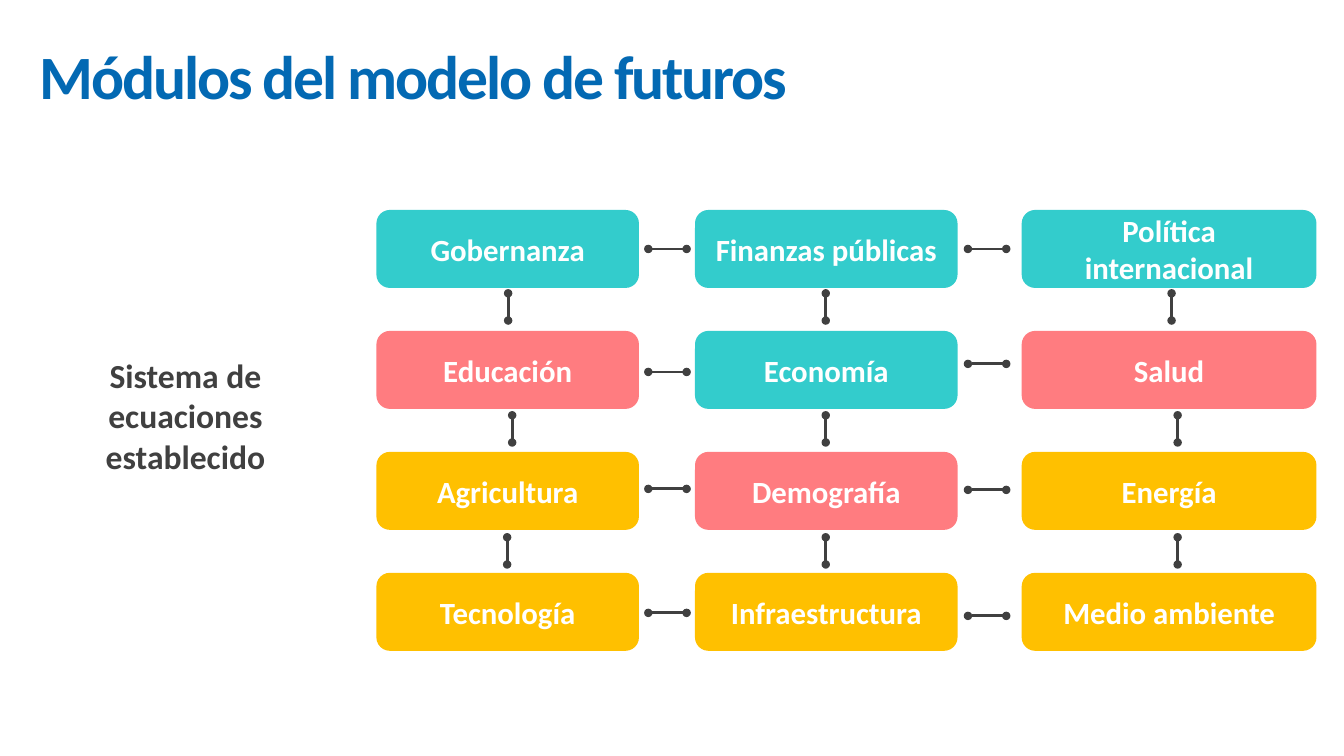
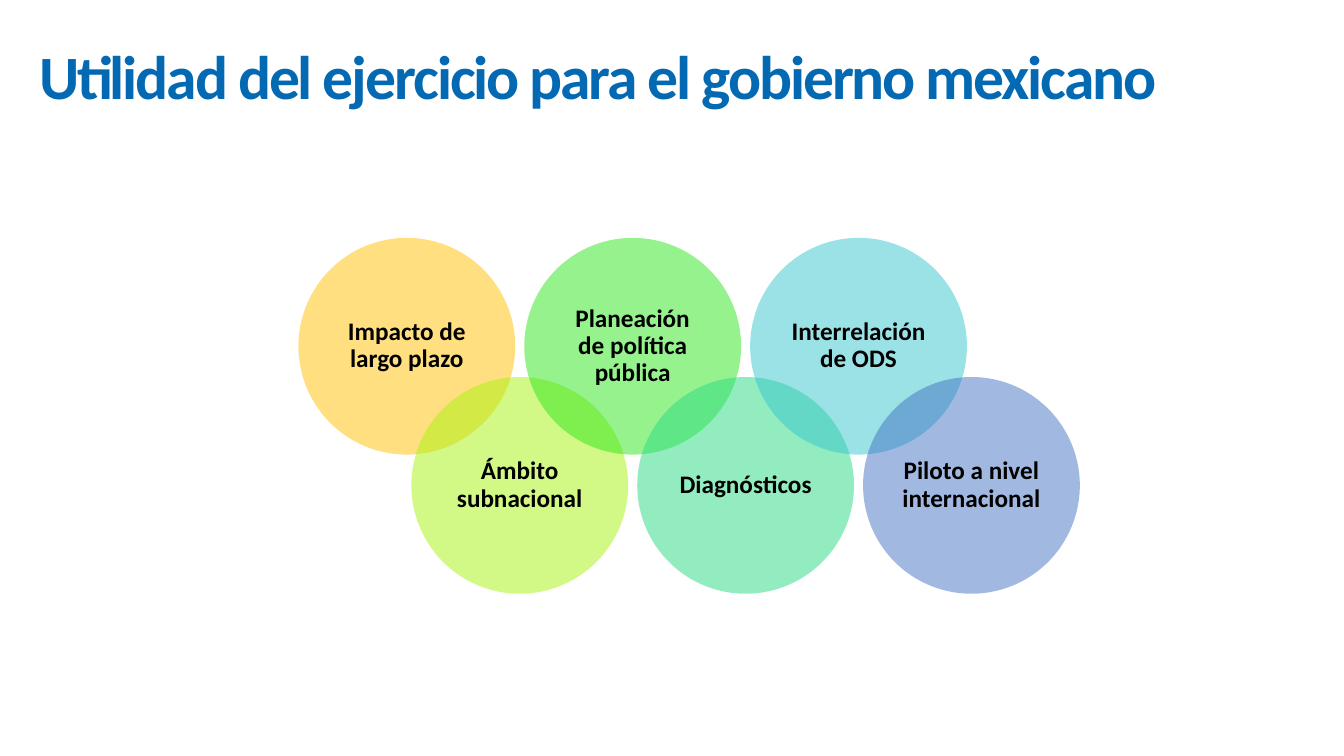
import pptx
import pptx.util
from pptx.dml.color import RGBColor
from pptx.enum.shapes import MSO_CONNECTOR, MSO_SHAPE
from pptx.enum.text import MSO_ANCHOR, PP_ALIGN
from pptx.oxml.ns import qn
from pptx.util import Inches
from lxml import etree

FONT = "Calibri"
BLUE = RGBColor(0x03, 0x69, 0xB3)
WHITE = RGBColor(0xFF, 0xFF, 0xFF)
BLACK = RGBColor(0x00, 0x00, 0x00)
GRAY = RGBColor(0x40, 0x40, 0x40)
TEAL = RGBColor(0x33, 0xCC, 0xCC)
CORAL = RGBColor(0xFF, 0x7C, 0x80)
AMBER = RGBColor(0xFF, 0xC0, 0x00)
LIME = RGBColor(0xA7, 0xF3, 0x0E)
GREEN = RGBColor(0x2E, 0xE7, 0x1C)
MINT = RGBColor(0x29, 0xDB, 0x80)
CYAN = RGBColor(0x37, 0xC6, 0xCF)
INDIGO = RGBColor(0x44, 0x72, 0xC4)

# Module grid: (left, width) of each column, top of the first row, row pitch
COLUMNS = [(3.74, 2.59), (6.9, 2.59), (10.14, 2.91)]
GRID_TOP, ROW_PITCH, MODULE_HEIGHT = 2.09, 1.2, 0.76
MODULES = [
    [("Gobernanza", TEAL), ("Finanzas públicas", TEAL), ("Política internacional", TEAL)],
    [("Educación", CORAL), ("Economía", TEAL), ("Salud", CORAL)],
    [("Agricultura", AMBER), ("Demografía", CORAL), ("Energía", AMBER)],
    [("Tecnología", AMBER), ("Infraestructura", AMBER), ("Medio ambiente", AMBER)],
]
# Links between columns: left end and the height in each row
ROW_LINKS = [(6.43, (2.47, 3.69, 4.85, 6.08)), (9.6, (2.47, 3.61, 4.86, 6.11))]
ROW_LINK_LENGTH = 0.38
# Links between rows: horizontal position in each gap, one tuple per column
COLUMN_LINKS = [(5.04, 5.08, 5.03), (8.19, 8.19, 8.19), (11.62, 11.68, 11.68)]
COLUMN_LINK_TOP, COLUMN_LINK_PITCH, COLUMN_LINK_LENGTH = 2.91, 1.21, 0.27

CIRCLE_LEFT, CIRCLE_STEP, CIRCLE_SIZE = 2.96, 1.12, 2.15
CIRCLE_TOPS = (2.36, 3.74)
USES = [
    ("Impacto de largo plazo", AMBER),
    ("Ámbito subnacional", LIME),
    ("Planeación de política pública", GREEN),
    ("Diagnósticos", MINT),
    ("Interrelación de ODS", CYAN),
    ("Piloto a nivel internacional", INDIGO),
]


def set_text(tf, text, size, color, align=PP_ALIGN.CENTER, spacing=None, tracking=None):
    """Fill a text frame, one paragraph per line of text; tracking is in points."""
    tf.word_wrap = True
    tf.vertical_anchor = MSO_ANCHOR.MIDDLE
    for i, line in enumerate(text.split("\n")):
        p = tf.paragraphs[0] if i == 0 else tf.add_paragraph()
        p.alignment = align
        if spacing:
            p.line_spacing = spacing
        r = p.add_run()
        r.text = line
        r.font.name = FONT
        r.font.size = pptx.util.Pt(size)
        r.font.bold = True
        r.font.color.rgb = color
        if tracking:
            r.font._element.set("spc", str(int(tracking * 100)))


def add_title_slide(prs, title):
    s = prs.slides.add_slide(prs.slide_layouts[5])
    sp = s.shapes.title
    sp.left, sp.top, sp.width, sp.height = map(Inches, (0.29, 0.27, 12.04, 1.03))
    set_text(sp.text_frame, title, 44, BLUE, align=PP_ALIGN.LEFT, spacing=0.9, tracking=-1.5)
    return s


def add_panel(s, kind, left, top, width, height, fill=None, line=None):
    sp = s.shapes.add_shape(kind, *map(Inches, (left, top, width, height)))
    sp.shadow.inherit = False
    if fill is None:
        sp.fill.background()
    else:
        sp.fill.solid()
        sp.fill.fore_color.rgb = fill
    if line is None:
        sp.line.fill.background()
    else:
        sp.line.color.rgb = line
        sp.line.width = pptx.util.Pt(1)
    return sp


def add_module(s, left, top, width, text, color):
    sp = add_panel(s, MSO_SHAPE.ROUNDED_RECTANGLE, left, top, width, MODULE_HEIGHT, color, color)
    set_text(sp.text_frame, text, 22, WHITE)


def add_link(s, x1, y1, x2, y2):
    """Draw a line with a dot at each end."""
    c = s.shapes.add_connector(MSO_CONNECTOR.STRAIGHT, *map(Inches, (x1, y1, x2, y2)))
    c.line.color.rgb = GRAY
    c.line.width = pptx.util.Pt(2)
    ln = c.line._get_or_add_ln()
    for end in ("a:headEnd", "a:tailEnd"):
        etree.SubElement(ln, qn(end), type="oval")
    etree.SubElement(c._element.spPr, qn("a:effectLst"))


def add_circle(s, left, top, text, color):
    """Draw a half-transparent circle with its label."""
    sp = add_panel(s, MSO_SHAPE.OVAL, left, top, CIRCLE_SIZE, CIRCLE_SIZE, color)
    rgb = sp._element.spPr.find(qn("a:solidFill")).find(qn("a:srgbClr"))
    etree.SubElement(rgb, qn("a:alpha"), val="50000")
    tf = sp.text_frame
    tf.margin_left = tf.margin_right = tf.margin_top = tf.margin_bottom = Inches(0.07)
    set_text(tf, text, 18, BLACK, spacing=0.9)


def build_modules(prs):
    s = add_title_slide(prs, "Módulos del modelo de futuros")
    for row, modules in enumerate(MODULES):
        for (left, width), (text, color) in zip(COLUMNS, modules):
            add_module(s, left, GRID_TOP + row * ROW_PITCH, width, text, color)
    sp = add_panel(s, MSO_SHAPE.ROUNDED_RECTANGLE, 0.84, 3.29, 2, 1.66)
    set_text(sp.text_frame, "Sistema de ecuaciones\nestablecido", 24, GRAY)
    for x, heights in ROW_LINKS:
        for y in heights:
            add_link(s, x, y, x + ROW_LINK_LENGTH, y)
    for positions in COLUMN_LINKS:
        for gap, x in enumerate(positions):
            y = COLUMN_LINK_TOP + gap * COLUMN_LINK_PITCH
            add_link(s, x, y, x, y + COLUMN_LINK_LENGTH)


def build_uses(prs):
    s = add_title_slide(prs, "Utilidad del ejercicio para el gobierno mexicano")
    for i, (text, color) in enumerate(USES):
        add_circle(s, CIRCLE_LEFT + i * CIRCLE_STEP, CIRCLE_TOPS[i % 2], text, color)


def main():
    prs = pptx.Presentation()
    prs.slide_width, prs.slide_height = Inches(13.33), Inches(7.5)
    build_modules(prs)
    build_uses(prs)
    prs.save("out.pptx")


if __name__ == "__main__":
    main()
